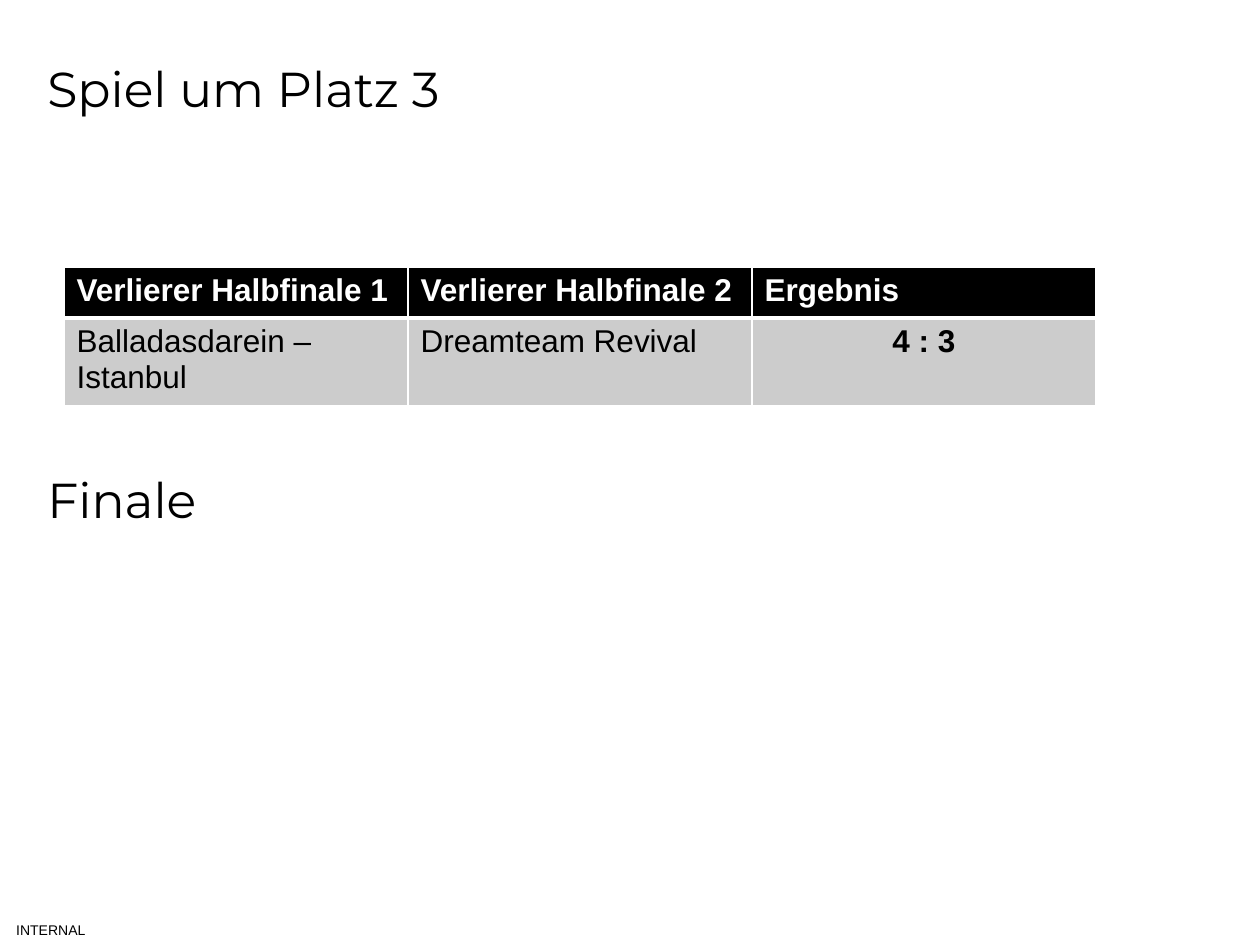
from dataclasses import dataclass

from lxml import etree
from pptx import Presentation
from pptx.dml.color import RGBColor
from pptx.enum.text import MSO_ANCHOR, PP_ALIGN
from pptx.oxml.ns import qn
from pptx.util import Pt

MIDDLE = MSO_ANCHOR.MIDDLE
LEFT, CENTER = PP_ALIGN.LEFT, PP_ALIGN.CENTER
PX = 914400 // 126


@dataclass(frozen=True)
class Theme:
    black: str = "000000"
    white: str = "FFFFFF"
    grey: str = "CCCCCC"
    heading_font: str = "Montserrat"
    body_font: str = "Arial"
    heading_size: int = 28
    table_size: int = 18
    label_size: int = 8


THEME = Theme()


def px(*lengths):
    return [n * PX for n in lengths]


def set_text(tf, text, font, size, color, bold=False, align=LEFT):
    tf.text = text
    p = tf.paragraphs[0]
    p.alignment = align
    f = p.runs[0].font
    f.name, f.size, f.bold = font, Pt(size), bold
    f.color.rgb = RGBColor.from_string(color)


def add_heading(s, box, text):
    tf = s.shapes.add_textbox(*px(*box)).text_frame
    tf.word_wrap = True
    tf.vertical_anchor = MIDDLE
    set_text(tf, text, THEME.heading_font, THEME.heading_size, THEME.black)


def add_label(s, box, text):
    tf = s.shapes.add_textbox(*px(*box)).text_frame
    tf.word_wrap = True
    tf.vertical_anchor = MIDDLE
    tf.margin_left = tf.margin_top = tf.margin_right = tf.margin_bottom = 0
    set_text(tf, text, THEME.body_font, THEME.label_size, THEME.black,
             align=CENTER)


def set_borders(cell, widths):
    tc_pr = cell._tc.get_or_add_tcPr()
    # Border lines come before the fill
    for i, (side, width) in enumerate(widths.items()):
        ln = etree.Element(qn(f"a:{side}"), w=str(Pt(width)))
        fill = etree.SubElement(ln, qn("a:solidFill"))
        etree.SubElement(fill, qn("a:srgbClr"), val=THEME.white)
        tc_pr.insert(i, ln)


def add_result_table(s, box, row_heights, rows):
    frame = s.shapes.add_table(len(rows), len(rows[0]), *px(*box))
    table = frame.table
    for row, height in zip(table.rows, row_heights):
        row.height = height * PX
    for r, texts in enumerate(rows):
        header = r == 0
        for c, text in enumerate(texts):
            cell = table.cell(r, c)
            result = not header and c == len(texts) - 1
            cell.fill.solid()
            cell.fill.fore_color.rgb = RGBColor.from_string(
                THEME.black if header else THEME.grey)
            set_text(cell.text_frame, text, THEME.body_font, THEME.table_size,
                     THEME.white if header else THEME.black,
                     bold=header or result, align=CENTER if result else LEFT)
            # Thick rule between header and body
            set_borders(cell, {"lnL": 1, "lnR": 1,
                               "lnT": 1 if header else 3,
                               "lnB": 3 if header else 1})


def main():
    prs = Presentation()
    prs.slide_width, prs.slide_height = px(1260, 945)
    s = prs.slides.add_slide(prs.slide_layouts[6])

    # Classification label
    add_label(s, (0, 915, 102, 30), "INTERNAL")

    # Third-place match
    add_heading(s, (35, 1, 992, 173), "Spiel um Platz 3")
    add_result_table(s, (64, 267, 1032, 133), (51, 82), [
        ("Verlierer Halbfinale 1", "Verlierer Halbfinale 2", "Ergebnis"),
        ("Balladasdarein – Istanbul", "Dreamteam Revival", "4 : 3"),
    ])

    # Final
    add_heading(s, (35, 412, 992, 173), "Finale")

    prs.save("out.pptx")


if __name__ == "__main__":
    main()
